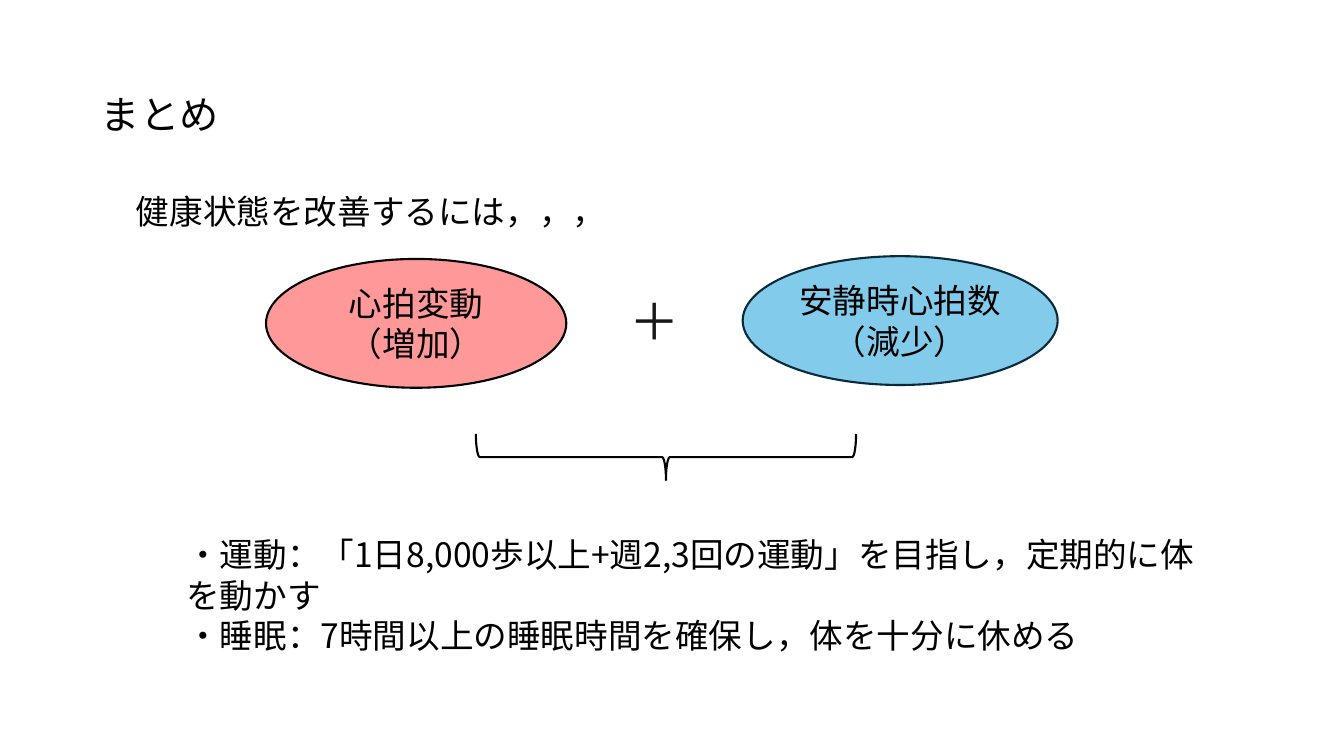
from lxml.etree import SubElement
from pptx import Presentation
from pptx.dml.color import RGBColor
from pptx.enum.shapes import MSO_SHAPE as Shape
from pptx.enum.text import MSO_ANCHOR as Anchor, MSO_AUTO_SIZE as AutoSize, PP_ALIGN as Align
from pptx.oxml.ns import qn
from pptx.util import Pt

FONT = "Noto Sans CJK JP"
BLACK = RGBColor(0x00, 0x00, 0x00)
CHARCOAL = RGBColor(0x17, 0x17, 0x17)
PINK = RGBColor(0xFF, 0x99, 0x99)
SKY = RGBColor(0x83, 0xCB, 0xEB)
NAVY = RGBColor(0x09, 0x2A, 0x39)


def write_lines(frame, lines, size, color=BLACK, align=Align.LEFT):
    """Fill a text frame with one paragraph per line."""
    frame.word_wrap = True
    for index, line in enumerate(lines):
        para = frame.paragraphs[0] if index == 0 else frame.add_paragraph()
        para.text = line
        para.alignment = align
        para.font.size = Pt(size)
        para.font.color.rgb = color
        para.font.name = FONT
        defaults = para._p.pPr.find(qn("a:defRPr"))
        SubElement(defaults, qn("a:ea")).set("typeface", FONT)


def add_label(page, box, lines, size, color=BLACK, align=Align.LEFT):
    """Place a text box in the given box."""
    label = page.shapes.add_textbox(*map(Pt, box))
    write_lines(label.text_frame, lines, size, color, align)
    label.text_frame.auto_size = AutoSize.SHAPE_TO_FIT_TEXT


def add_outlined(page, kind, box, line_color):
    """Place a preset shape with a thin outline and no shadow."""
    shape = page.shapes.add_shape(kind, *map(Pt, box))
    shape.shadow.inherit = False
    shape.line.color.rgb = line_color
    shape.line.width = Pt(1.5)
    return shape


def add_factor(page, box, lines, fill, line_color):
    """Place an ellipse naming one health factor."""
    ellipse = add_outlined(page, Shape.OVAL, box, line_color)
    ellipse.fill.solid()
    ellipse.fill.fore_color.rgb = fill
    ellipse.text_frame.vertical_anchor = Anchor.MIDDLE
    write_lines(ellipse.text_frame, lines, 24, align=Align.CENTER)


def add_down_brace(page, box):
    """Place a brace pointing down that fills the given box."""
    left, top, width, height = box
    shift = (width - height) / 2
    upright = (left + shift, top - shift, height, width)
    brace = add_outlined(page, Shape.LEFT_BRACE, upright, BLACK)
    brace.rotation = 270
    brace.fill.background()


def add_factors(page, box):
    """Place the two factors, the plus sign and the brace below them."""
    left, top, width, height = box
    add_factor(page, (left, top + 2, 214.5, 92), ["心拍変動", "（増加）"], PINK, BLACK)
    add_factor(page, (left + width - 225, top, 225, 92),
               ["安静時心拍数", "（減少）"], SKY, NAVY)
    add_label(page, (left + 235.5, top + 21, 84, 51), ["＋"], 36, CHARCOAL, Align.CENTER)
    add_down_brace(page, (left + 150, top + height - 33, 271.5, 33))


def add_summary_slide(deck):
    """Build the summary slide."""
    page = deck.slides.add_slide(deck.slide_layouts[6])
    add_label(page, (65, 61, 334, 41), ["まとめ"], 28)
    add_label(page, (90, 132.5, 334, 36), ["健康状態を改善するには，，，"], 24)
    add_factors(page, (190, 183, 565.5, 160))
    add_label(page, (126, 378, 756, 65.5), [
        "・運動：「1日8,000歩以上+週2,3回の運動」を目指し，定期的に体を動かす",
        "・睡眠：7時間以上の睡眠時間を確保し，体を十分に休める",
    ], 24)


def main():
    """Create the deck and save it."""
    deck = Presentation()
    deck.slide_width, deck.slide_height = Pt(960), Pt(540)
    add_summary_slide(deck)
    deck.save("out.pptx")


if __name__ == "__main__":
    main()
